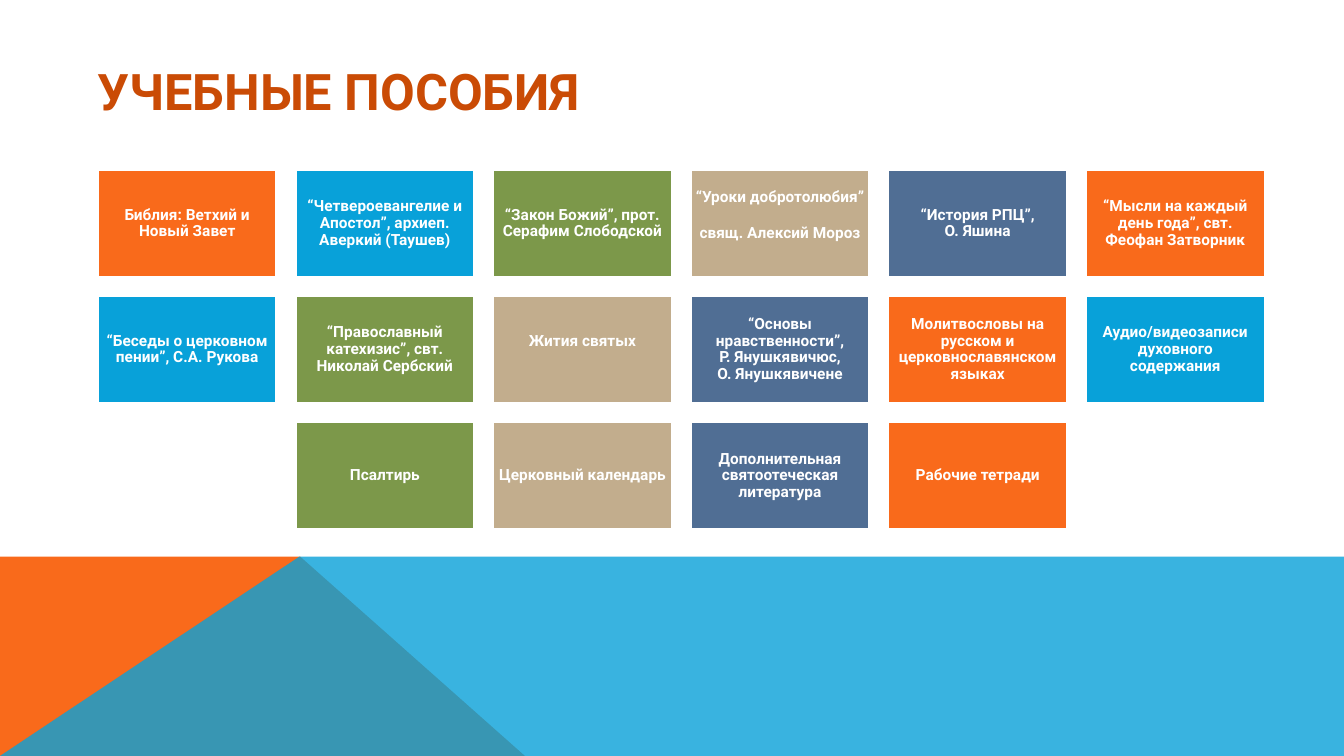
from lxml import etree
from pptx import Presentation
from pptx.dml.color import RGBColor
from pptx.enum.shapes import MSO_SHAPE
from pptx.enum.text import MSO_ANCHOR, PP_ALIGN
from pptx.oxml.ns import qn
from pptx.util import Cm, Pt

RECTANGLE = MSO_SHAPE.RECTANGLE
MIDDLE = MSO_ANCHOR.MIDDLE
LEFT, CENTER = PP_ALIGN.LEFT, PP_ALIGN.CENTER

# Content: rows of cards, one string per paragraph
TITLE = "УЧЕБНЫЕ ПОСОБИЯ"
ROWS = [
    [
        ["Библия: Ветхий и Новый Завет"],
        ["“Четвероевангелие и Апостол”, архиеп. Аверкий (Таушев)"],
        ["“Закон Божий”, прот. Серафим Слободской"],
        ["“Уроки добротолюбия”", "свящ. Алексий Мороз"],
        ["“История РПЦ”,", "О. Яшина"],
        ["“Мысли на каждый день года”, свт. Феофан Затворник"],
    ],
    [
        ["“Беседы о церковном пении”, С.А. Рукова"],
        ["“Православный катехизис”, свт. Николай Сербский"],
        ["Жития святых"],
        ["“Основы нравственности”,", "Р. Янушкявичюс,", "О. Янушкявичене"],
        ["Молитвословы на русском и церковнославянском языках"],
        ["Аудио/видеозаписи духовного содержания"],
    ],
    [
        ["Псалтирь"],
        ["Церковный календарь"],
        ["Дополнительная святоотеческая литература"],
        ["Рабочие тетради"],
    ],
]
# Cards set a little higher, with the gap between their paragraphs in points
RAISED = {"“Уроки добротолюбия”": 13.5, "Жития святых": 0}

FONT = "Roboto"
ORANGE, BLUE, WHITE, RUST = "F96A1B", "08A1D9", "FFFFFF", "CA4B05"
CARD_COLORS = [ORANGE, BLUE, "7C984A", "C2AD8D", "506E94"]

# Layout in centimetres
PAGE_W, PAGE_H = 33.87, 19.05
GRID_LEFT, GRID_TOP = 2.46, 4.27
CARD_W, CARD_H = 4.52, 2.72
STEP_X, STEP_Y = 4.98, 3.18
INSET, RAISE = 0.13, 0.4
BAND_TOP = 14.03
BANDS = [
    ([(0, PAGE_H), (0, BAND_TOP), (7.57, BAND_TOP), (13.23, PAGE_H)], ORANGE, 100),
    ([(0, PAGE_H), (7.54, BAND_TOP), (PAGE_W, BAND_TOP), (PAGE_W, PAGE_H)], BLUE, 80),
]


def rgb(value):
    return RGBColor.from_string(value)


def write(frame, lines, size, color, align=CENTER, spacing=1.0, gap=0):
    frame.word_wrap = True
    frame.vertical_anchor = MIDDLE
    for index, line in enumerate(lines):
        para = frame.add_paragraph() if index else frame.paragraphs[0]
        para.alignment = align
        para.line_spacing = spacing
        para.space_before = Pt(gap if index else 0)
        span = para.add_run()
        span.text = line
        span.font.name = FONT
        span.font.size = Pt(size)
        span.font.bold = True
        span.font.color.rgb = rgb(color)


def add_band(page, points, color, opacity):
    corners = [(Cm(x), Cm(y)) for x, y in points]
    builder = page.shapes.build_freeform(*corners[0])
    builder.add_line_segments(corners[1:], close=True)
    band = builder.convert_to_shape()
    band.shadow.inherit = False
    band.fill.solid()
    band.fill.fore_color.rgb = rgb(color)
    band.line.fill.background()
    if opacity < 100:
        fill_color = band.fill._xPr.find(qn("a:solidFill"))[0]
        etree.SubElement(fill_color, qn("a:alpha")).set("val", str(opacity * 1000))


def add_card(page, left, top, lines, color):
    card = page.shapes.add_shape(RECTANGLE, Cm(left), Cm(top), Cm(CARD_W), Cm(CARD_H))
    card.shadow.inherit = False
    card.fill.solid()
    card.fill.fore_color.rgb = rgb(color)
    card.line.color.rgb = rgb(WHITE)
    card.line.width = Pt(2)
    frame = card.text_frame
    frame.margin_left = frame.margin_right = frame.margin_top = Cm(INSET)
    raised = lines[0] in RAISED
    frame.margin_bottom = Cm(INSET + RAISE if raised else INSET)
    write(frame, lines, 11, WHITE, spacing=0.9, gap=RAISED.get(lines[0], 0))


def main():
    deck = Presentation()
    deck.slide_width, deck.slide_height = Cm(PAGE_W), Cm(PAGE_H)
    page = deck.slides.add_slide(deck.slide_layouts[5])

    # Coloured bands along the bottom
    for points, color, opacity in BANDS:
        add_band(page, points, color, opacity)

    # Title
    title = page.shapes.title
    title.left, title.top = Cm(2.21), Cm(1.52)
    title.width, title.height = Cm(28.5), Cm(1.52)
    write(title.text_frame, [TITLE], 36, RUST, align=LEFT)

    # Cards: colours run on from row to row, short rows are centred
    columns = max(len(row) for row in ROWS)
    count = 0
    for row_index, row in enumerate(ROWS):
        row_left = GRID_LEFT + (columns - len(row)) / 2 * STEP_X
        for column, lines in enumerate(row):
            color = CARD_COLORS[count % len(CARD_COLORS)]
            add_card(page, row_left + column * STEP_X,
                     GRID_TOP + row_index * STEP_Y, lines, color)
            count += 1

    deck.save("out.pptx")


if __name__ == "__main__":
    main()
